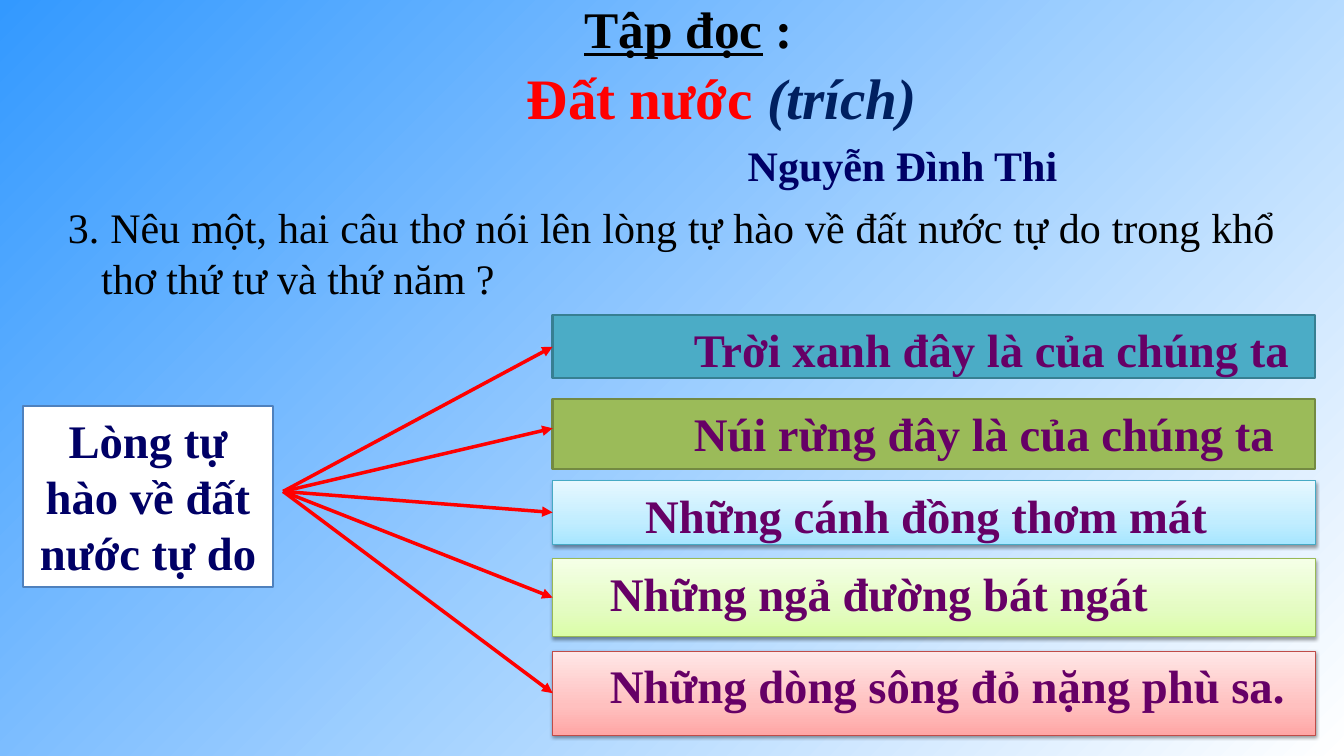
from lxml import etree
from pptx import Presentation
from pptx.dml.color import RGBColor
from pptx.enum.shapes import MSO_CONNECTOR, MSO_SHAPE
from pptx.enum.text import MSO_ANCHOR, PP_ALIGN
from pptx.oxml.ns import qn
from pptx.util import Cm, Pt

RECT = MSO_SHAPE.RECTANGLE
STRAIGHT = MSO_CONNECTOR.STRAIGHT
TOP = MSO_ANCHOR.TOP
LEFT, CENTER, JUSTIFY = PP_ALIGN.LEFT, PP_ALIGN.CENTER, PP_ALIGN.JUSTIFY
FONT = "Times New Roman"
PLUM, NAVY, RED = "660066", "000066", "FF0000"
HUB = (8.56, 14.86)

# text, indent, top, height, fill, line colour, line width, arrow tip (None = middle)
VERSES = [
    ("Trời xanh đây là của chúng ta", 3.91, 9.53, 1.91,
     "4BACC6", "377F92", 2, None),
    ("Núi rừng đây là của chúng ta", 3.91, 12.07, 2.11,
     "9BBB59", "738A42", 2, 12.95),
    ("Những cánh đồng thơm mát", 2.44, 14.53, 1.93,
     [(0, "A7E6FF"), (35, "C1EDFF"), (100, "E7F8FF")], "46AAC5", 0.75, None),
    ("Những ngả đường bát ngát", 1.37, 16.89, 2.36,
     [(0, "DAFDA7"), (35, "E4FCC2"), (100, "F5FFE7")], "98B955", 0.75, None),
    ("Những dòng sông đỏ nặng phù sa.", 1.37, 19.69, 2.54,
     [(0, "FFA6A5"), (35, "FFC0BF"), (100, "FFE7E7")], "BF4C48", 0.75, None),
]


def rgb(code):
    return RGBColor.from_string(code)


def add(parent, tag, **attrs):
    node = etree.SubElement(parent, qn(tag))
    for name, value in attrs.items():
        node.set(name, str(value))
    return node


def blend(fill, owner, stops, angle):
    """Linear gradient; the angle runs counter-clockwise."""
    fill.gradient()
    fill.gradient_angle = angle
    group = owner.element.xpath(".//a:gsLst")[0]
    for stop in list(group):
        group.remove(stop)
    for place, code in stops:
        stop = add(group, "a:gs", pos=place * 1000)
        add(stop, "a:srgbClr", val=code)


def shade(shape):
    effects = shape.element.spPr.find(qn("a:effectLst"))
    outer = add(effects, "a:outerShdw", blurRad=Pt(3.1), dist=Pt(1.6),
                dir=90 * 60000, rotWithShape=0)
    add(add(outer, "a:srgbClr", val="000000"), "a:alpha", val=38000)


def style(run, size, color, bold=False, italic=False, under=False):
    font = run.font
    font.name, font.size, font.color.rgb = FONT, Pt(size), rgb(color)
    font.bold, font.italic, font.underline = bold, italic, under


def setup(shape):
    frame = shape.text_frame
    frame.word_wrap = True
    frame.vertical_anchor = TOP
    frame.margin_left = frame.margin_right = Cm(0.36)
    frame.margin_top = frame.margin_bottom = Cm(0.18)
    return frame


def indent(para, margin, first=0):
    props = para._p.get_or_add_pPr()
    props.set("marL", str(Cm(margin)))
    props.set("indent", str(Cm(first)))


def label(slide, x, y, w, h):
    return setup(slide.shapes.add_textbox(Cm(x), Cm(y), Cm(w), Cm(h)))


def write(para, parts, align=LEFT):
    """Fill a paragraph with (text, size, colour, bold, italic, underline) parts."""
    para.alignment = align
    for text, *look in parts:
        run = para.add_run()
        run.text = text
        style(run, *look)


def panel(slide, x, y, w, h, fill, edge, width):
    shape = slide.shapes.add_shape(RECT, Cm(x), Cm(y), Cm(w), Cm(h))
    shape.shadow.inherit = False
    if isinstance(fill, str):
        shape.fill.solid()
        shape.fill.fore_color.rgb = rgb(fill)
    else:
        blend(shape.fill, shape, fill, 90)
        shade(shape)
    shape.line.color.rgb = rgb(edge)
    shape.line.width = Pt(width)
    setup(shape)
    return shape


def arrow(slide, box, tip):
    x, y = HUB
    end = box.top + box.height // 2 if tip is None else Cm(tip)
    link = slide.shapes.add_connector(STRAIGHT, Cm(x), Cm(y), box.left, end)
    if tip is None:
        link.end_connect(box, 1)
    link.line.color.rgb = rgb(RED)
    link.line.width = Pt(3)
    add(link.line._get_or_add_ln(), "a:tailEnd", type="triangle")
    add(link.element.spPr, "a:effectLst")


def main():
    deck = Presentation()
    deck.slide_width, deck.slide_height = Cm(40.64), Cm(22.86)
    slide = deck.slides.add_slide(deck.slide_layouts[6])
    blend(slide.background.fill, slide, [(0, "3399FF"), (100, "FFFFFF")], 315)

    # Question
    para = label(slide, 1.35, 5.92, 37.59, 3.81).paragraphs[0]
    write(para, [("3. Nêu một, hai câu thơ nói lên lòng tự hào về đất nước tự do "
                  "trong khổ thơ thứ tư và thứ năm ?", 36, "000000")], JUSTIFY)
    indent(para, 1.35, -1.01)

    # Main idea
    idea = panel(slide, 0.69, 12.27, 7.57, 5.49, "FFFFFF", "4F81BD", 2)
    write(idea.text_frame.paragraphs[0],
          [("Lòng tự hào về đất nước tự do", 40, NAVY, True)], CENTER)

    # Verses and their arrows
    for text, inset, top, height, fill, edge, width, tip in VERSES:
        box = panel(slide, 16.71, top, 23.06, height, fill, edge, width)
        para = box.text_frame.paragraphs[0]
        write(para, [(text, 40, PLUM, True)])
        indent(para, inset)
        arrow(slide, box, tip)

    # Lesson heading
    write(label(slide, 3.89, -0.25, 33.86, 2.24).paragraphs[0],
          [("Tập đọc", 44, "000000", True, False, True),
           (" :", 44, "000000", True)], CENTER)

    # Poem and poet
    frame = label(slide, 15.57, 1.7, 25.07, 5.16)
    write(frame.paragraphs[0], [("Đất nước ", 49, RED, True),
                                ("(trích)", 49, "002060", True, True)])
    poet = frame.add_paragraph()
    write(poet, [("Nguyễn Đình Thi", 36, NAVY, True)])
    indent(poet, 6.68)
    poet.space_before = Pt(7.2)

    deck.save("out.pptx")


if __name__ == "__main__":
    main()
